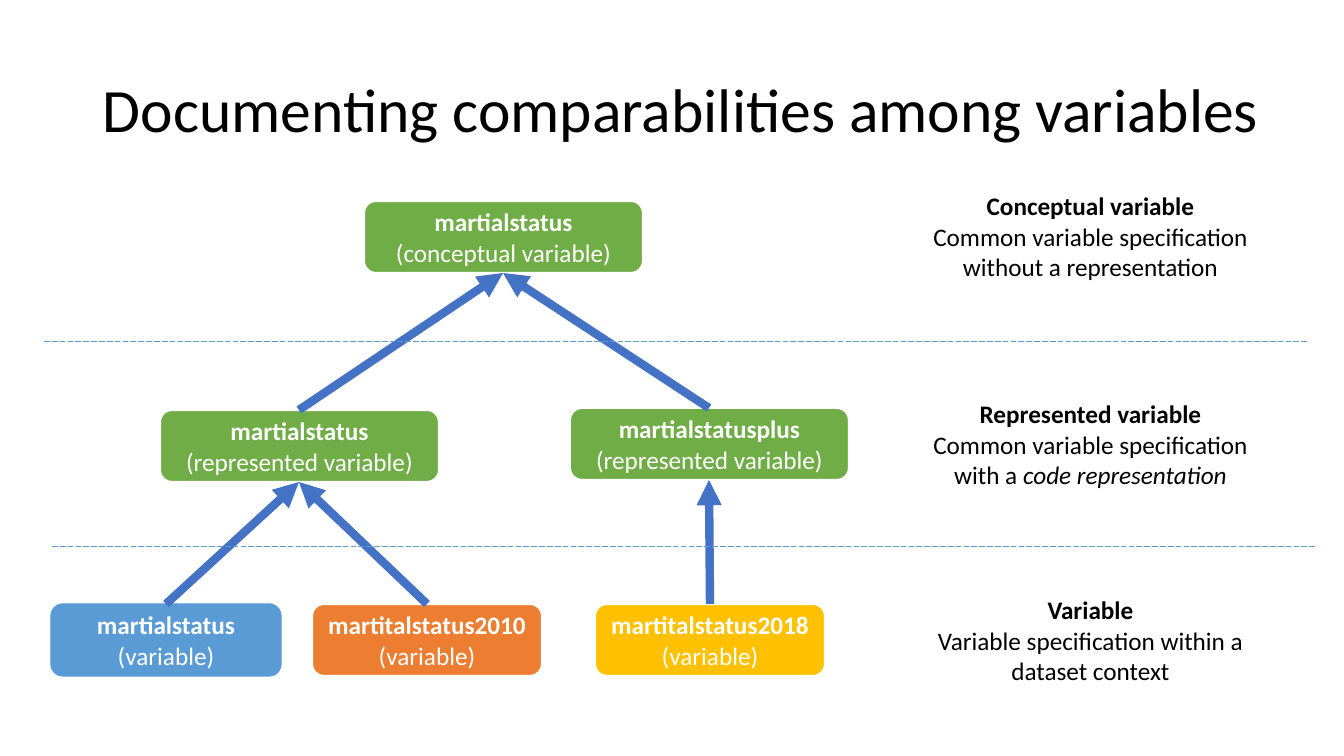
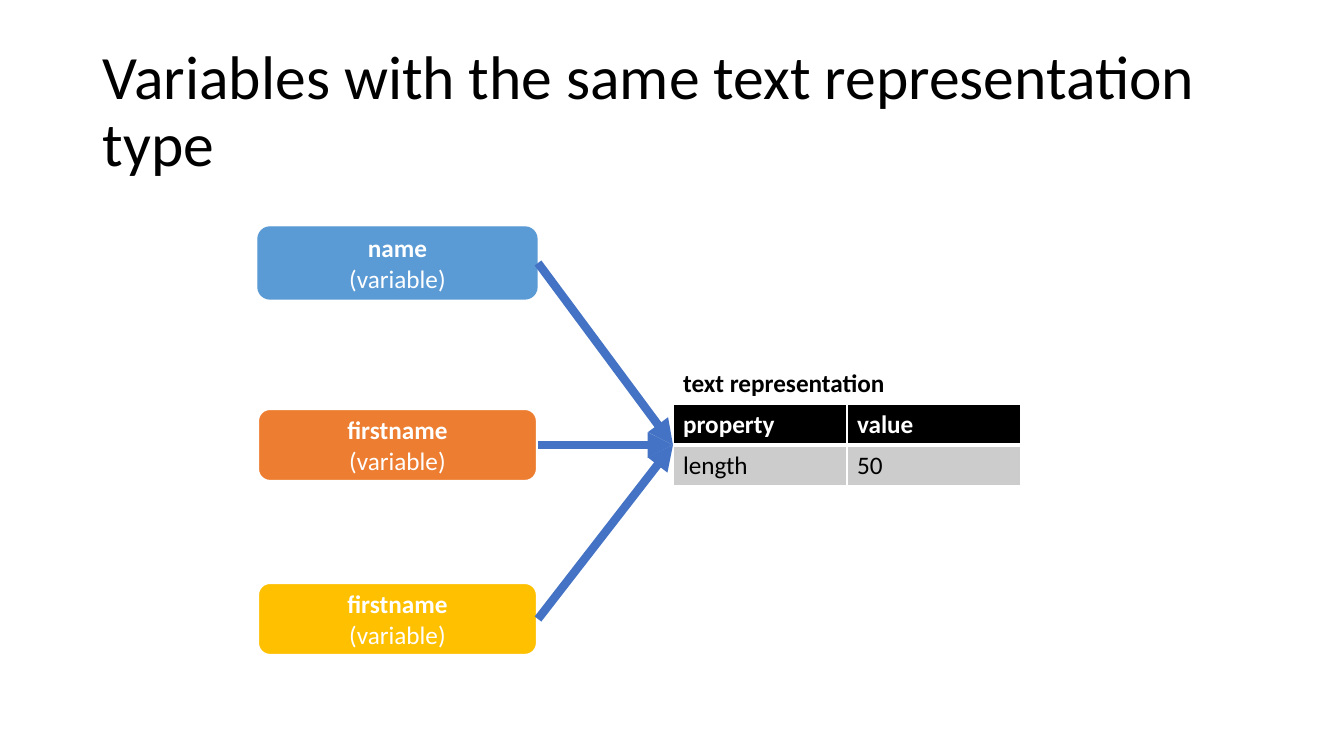
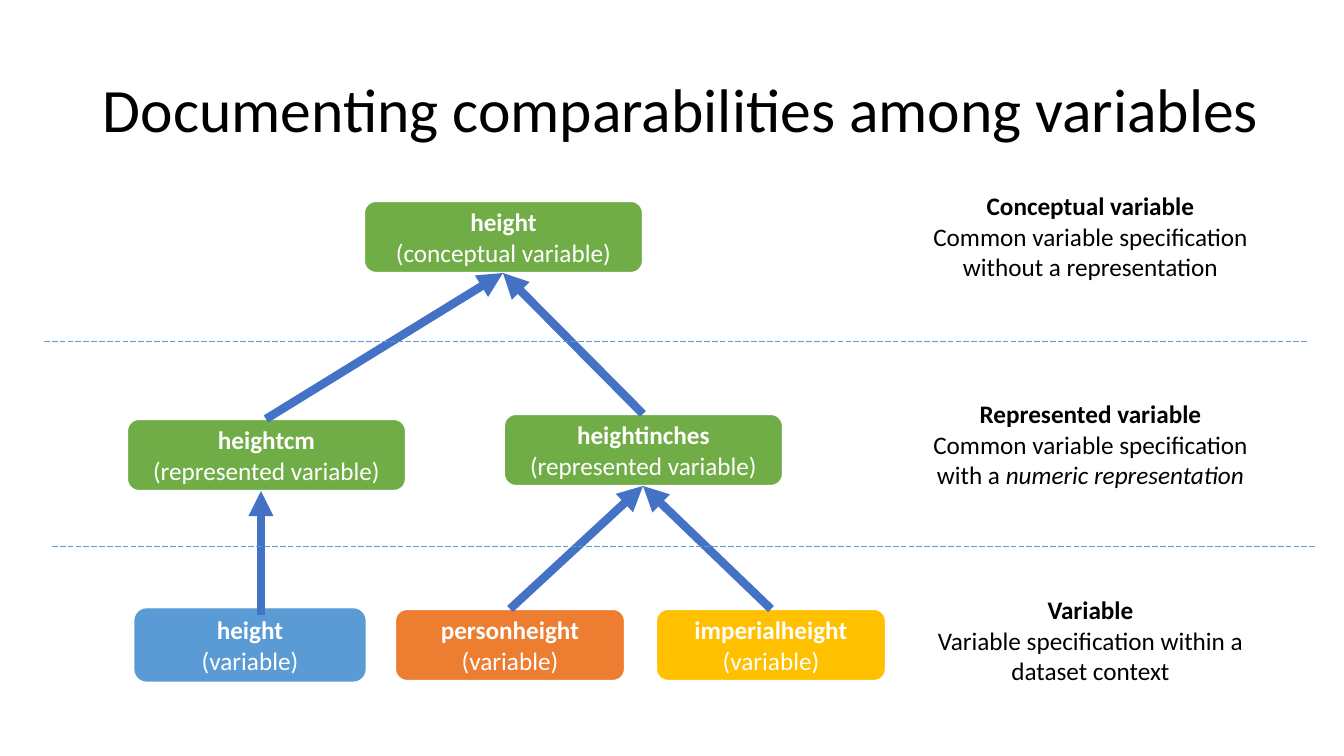
from lxml import etree
from pptx import Presentation
from pptx.dml.color import RGBColor
from pptx.enum.dml import MSO_LINE
from pptx.enum.shapes import MSO_CONNECTOR, MSO_SHAPE
from pptx.enum.text import MSO_ANCHOR, PP_ALIGN
from pptx.oxml.ns import qn
from pptx.util import Pt

PX = 9071  # EMU per pixel
ROUNDED, STRAIGHT = MSO_SHAPE.ROUNDED_RECTANGLE, MSO_CONNECTOR.STRAIGHT
LEFT, CENTER = PP_ALIGN.LEFT, PP_ALIGN.CENTER
TOP, MIDDLE = MSO_ANCHOR.TOP, MSO_ANCHOR.MIDDLE
LONG_DASH = MSO_LINE.LONG_DASH


class Theme:
    font = "Calibri"
    title_size, body_size = 44, 18
    black, white, gray = "000000", "FFFFFF", "CCCCCC"
    green, blue, orange, gold = "70AD47", "5B9BD5", "ED7D31", "FFC000"
    arrow = "4472C4"


def write(tf, paragraphs, size=Theme.body_size, color=Theme.black,
          align=CENTER, anchor=MIDDLE, spacing=None):
    """Each paragraph is a list of (text, style); style holds "b" and/or "i"."""
    tf.word_wrap = True
    tf.vertical_anchor = anchor
    for i, runs in enumerate(paragraphs):
        p = tf.paragraphs[0] if i == 0 else tf.add_paragraph()
        p.alignment = align
        p.line_spacing = spacing
        for text, style in runs:
            r = p.add_run()
            r.text = text
            r.font.name, r.font.size = Theme.font, Pt(size)
            r.font.bold, r.font.italic = "b" in style, "i" in style
            r.font.color.rgb = RGBColor.from_string(color)


def draw_line(s, ends, color, width, dash=None, arrow=False):
    line = s.shapes.add_connector(STRAIGHT, *[v * PX for v in ends])
    line.line.color.rgb = RGBColor.from_string(color)
    line.line.width = Pt(width)
    if dash:
        line.line.dash_style = dash
    if arrow:
        etree.SubElement(line.line._get_or_add_ln(), qn("a:tailEnd"), type="triangle")
    etree.SubElement(line._element.spPr, qn("a:effectLst"))


# Slide content: boxes are (name, kind, fill, left, top, width);
# links join the top of one box to the bottom of another
WIDE, NARROW, BOX_H = 279, 230, 72
CONCEPT, REPRESENTED, VARIABLE = "(conceptual variable)", "(represented variable)", "(variable)"
COMPARE_TITLE = "Documenting comparabilities among variables"
VARIABLE_TOPS = (227, 409, 583)

slides = [
    dict(title=COMPARE_TITLE, title_width=1194, representation="code representation",
         boxes=[("martialstatus", CONCEPT, Theme.green, 364, 201, WIDE),
                ("martialstatus", REPRESENTED, Theme.green, 160, 410, WIDE),
                ("martialstatusplus", REPRESENTED, Theme.green, 570, 408, WIDE),
                ("martialstatus", VARIABLE, Theme.blue, 51, 604, NARROW),
                ("martitalstatus2010", VARIABLE, Theme.orange, 312, 604, NARROW),
                ("martitalstatus2018", VARIABLE, Theme.gold, 595, 604, NARROW)],
         links=[(1, 0), (2, 0), (3, 1), (4, 1), (5, 2)], arrows=[], tables=[]),
    dict(title="Variables with the same text representation type", title_width=1230,
         representation=None,
         boxes=[(name, VARIABLE, fill, 258, top, WIDE) for name, fill, top in zip(
             ("name", "firstname", "firstname"),
             (Theme.blue, Theme.orange, Theme.gold), VARIABLE_TOPS)],
         links=[], arrows=[(538, top + BOX_H // 2, 673, 445) for top in VARIABLE_TOPS],
         tables=[(363, 290, [["text representation"]], [(None, Theme.black, "b")]),
                 (404, 174, [["property", "value"], ["length", "50"]],
                  [(Theme.black, Theme.white, "b"), (Theme.gray, Theme.black, "")])]),
    dict(title=COMPARE_TITLE, title_width=1194, representation="numeric representation",
         boxes=[("height", CONCEPT, Theme.green, 364, 201, WIDE),
                ("heightcm", REPRESENTED, Theme.green, 127, 419, WIDE),
                ("heightinches", REPRESENTED, Theme.green, 504, 414, WIDE),
                ("height", VARIABLE, Theme.blue, 135, 609, NARROW),
                ("personheight", VARIABLE, Theme.orange, 395, 609, NARROW),
                ("imperialheight", VARIABLE, Theme.gold, 656, 609, NARROW)],
         links=[(1, 0), (2, 0), (4, 2), (5, 2)], arrows=[(261, 615, 261, 491)], tables=[]),
]

prs = Presentation()
prs.slide_width, prs.slide_height = 1344 * PX, 756 * PX

for content in slides:
    s = prs.slides.add_slide(prs.slide_layouts[6])

    # Title
    sp = s.shapes.add_textbox(93 * PX, 40 * PX, content["title_width"] * PX, 146 * PX)
    write(sp.text_frame, [[(content["title"], "")]], size=Theme.title_size,
          align=LEFT, spacing=0.9)

    # Tables
    for top, col_w, rows, styles in content["tables"]:
        row_h = 41
        table = s.shapes.add_table(len(rows), len(rows[0]), 673 * PX, top * PX,
                                   col_w * len(rows[0]) * PX, row_h * len(rows) * PX).table
        table.horz_banding = False
        for i, (row, (fill, color, style)) in enumerate(zip(rows, styles)):
            table.rows[i].height = row_h * PX
            for j, text in enumerate(row):
                cell = table.cell(i, j)
                for side in ("lnL", "lnR", "lnT", "lnB"):
                    heavy = (side == "lnB" and i == 0) or (side == "lnT" and i == 1)
                    ln = etree.SubElement(cell._tc.get_or_add_tcPr(), qn("a:" + side),
                                          w=str(Pt(3 if heavy else 1)))
                    solid = etree.SubElement(ln, qn("a:solidFill"))
                    etree.SubElement(solid, qn("a:srgbClr"), val=Theme.white)
                if fill:
                    cell.fill.solid()
                    cell.fill.fore_color.rgb = RGBColor.from_string(fill)
                else:
                    cell.fill.background()
                write(cell.text_frame, [[(text, style)]], color=color, align=LEFT, anchor=TOP)

    # Variable boxes
    for name, kind, fill, left, top, width in content["boxes"]:
        sp = s.shapes.add_shape(ROUNDED, left * PX, top * PX, width * PX, BOX_H * PX)
        sp.shadow.inherit = False
        sp.fill.solid()
        sp.fill.fore_color.rgb = RGBColor.from_string(fill)
        is_blue = fill == Theme.blue
        sp.line.color.rgb = RGBColor.from_string(Theme.blue if is_blue else Theme.white)
        sp.line.width = Pt(1 if is_blue else 1.5)
        write(sp.text_frame, [[(name, "b")], [(kind, "")]], color=Theme.white)

    # Arrows
    arrows = list(content["arrows"])
    for child, parent in content["links"]:
        _, _, _, x1, y1, w1 = content["boxes"][child]
        _, _, _, x2, y2, w2 = content["boxes"][parent]
        arrows.append((x1 + w1 // 2, y1, x2 + w2 // 2, y2 + BOX_H))
    for ends in arrows:
        draw_line(s, ends, Theme.arrow, 6, arrow=True)

    # Level dividers and explanations
    if content["representation"]:
        for left, y in ((43, 341), (51, 546)):
            draw_line(s, (left + 1264, y, left, y), Theme.blue, 0.5, dash=LONG_DASH)
        notes = [
            (175, "Conceptual variable",
             [("Common variable specification without a representation", "")]),
            (383, "Represented variable",
             [("Common variable specification with a ", ""), (content["representation"], "i")]),
            (579, "Variable", [("Variable specification within a dataset context", "")]),
        ]
        for top, heading, runs in notes:
            sp = s.shapes.add_textbox(916 * PX, top * PX, 349 * PX, 122 * PX)
            write(sp.text_frame, [[(heading, "b")], runs])

prs.save("out.pptx")
